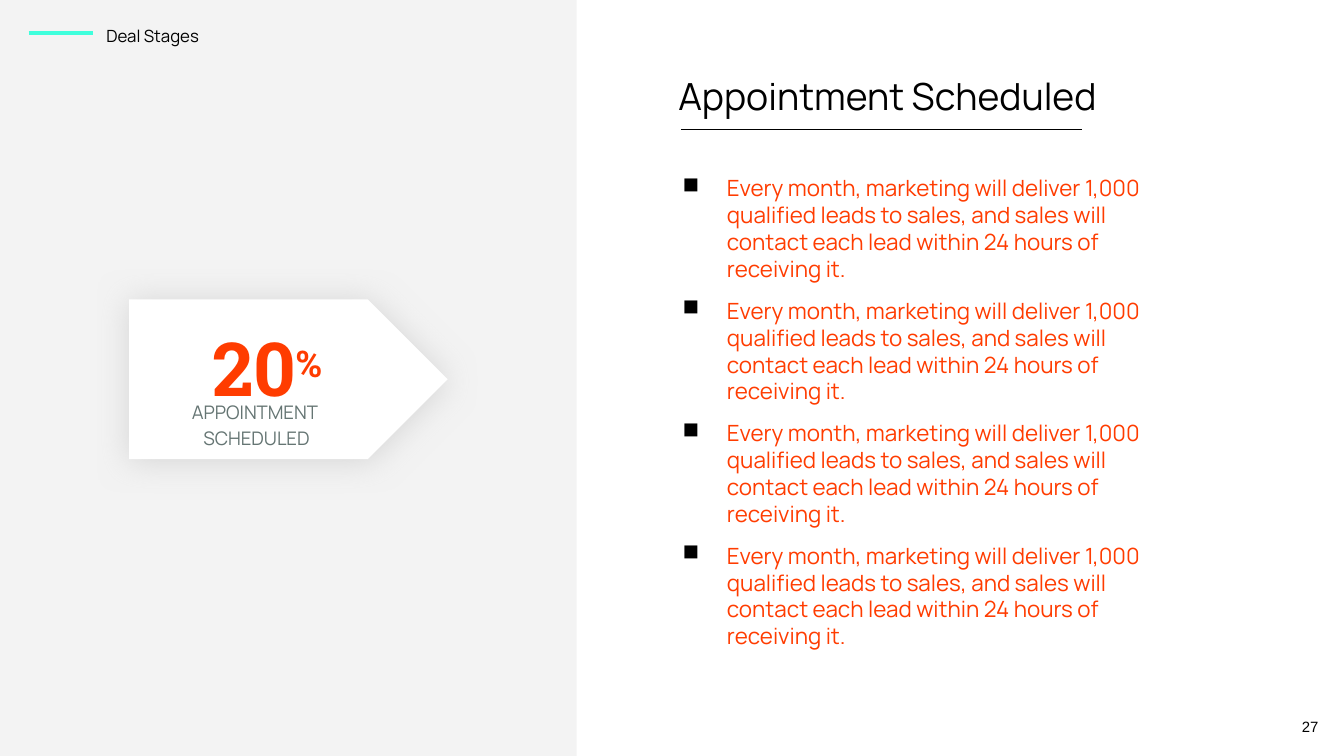
from lxml import etree
from pptx import Presentation
from pptx.dml.color import RGBColor
from pptx.enum.shapes import MSO_CONNECTOR, MSO_SHAPE
from pptx.enum.text import MSO_ANCHOR, PP_ALIGN
from pptx.oxml.ns import qn
from pptx.util import Cm, Pt

RECTANGLE = MSO_SHAPE.RECTANGLE
ARROW_TAG = MSO_SHAPE.PENTAGON
STRAIGHT = MSO_CONNECTOR.STRAIGHT
TOP, MIDDLE = MSO_ANCHOR.TOP, MSO_ANCHOR.MIDDLE
CENTER, RIGHT = PP_ALIGN.CENTER, PP_ALIGN.RIGHT

BLACK = RGBColor(0x00, 0x00, 0x00)
WHITE = RGBColor(0xFF, 0xFF, 0xFF)
PANEL_GRAY = RGBColor(0xF3, 0xF3, 0xF3)
LABEL_GRAY = RGBColor(0x65, 0x75, 0x73)
SHADOW_GRAY = RGBColor(0xB7, 0xB7, 0xB7)
ORANGE = RGBColor(0xFF, 0x3C, 0x00)
AQUA = RGBColor(0x3F, 0xFF, 0xDC)

SLIDE_WIDTH, SLIDE_HEIGHT = 25.4, 14.29
INSET = 0.25
COMMITMENT = ("Every month, marketing will deliver 1,000 qualified leads to sales, "
              "and sales will contact each lead within 24 hours of receiving it.")

HEADER = {"name": "Manrope", "size": Pt(9), "color": BLACK}
TITLE = {"name": "Manrope", "size": Pt(20), "color": BLACK}
BODY = {"name": "Manrope", "size": Pt(12), "color": ORANGE}
LABEL = {"name": "Manrope", "size": Pt(10), "color": LABEL_GRAY}
NUMBER = {"name": "Roboto Slab", "size": Pt(40), "bold": True, "color": ORANGE}
PERCENT = {**NUMBER, "size": Pt(34)}
PAGE = {"name": "Arial", "size": Pt(8), "color": BLACK}


def apply_format(target, values):
    for name, value in values.items():
        if name == "color":
            target.color.rgb = value
        else:
            setattr(target, name, value)


def add_run(paragraph, text, font_values):
    run = paragraph.add_run()
    run.text = text
    apply_format(run.font, font_values)
    return run


def add_text_frame(slide, box, anchor=TOP):
    frame = slide.shapes.add_textbox(*(Cm(length) for length in box)).text_frame
    margins = ("margin_left", "margin_top", "margin_right", "margin_bottom")
    apply_format(frame, {"word_wrap": True, "vertical_anchor": anchor,
                         **dict.fromkeys(margins, Cm(INSET))})
    return frame


def add_text(slide, box, text, font_values, anchor=TOP, **paragraph_values):
    paragraph = add_text_frame(slide, box, anchor).paragraphs[0]
    apply_format(paragraph, paragraph_values)
    for index, line in enumerate(text.split("\n")):
        if index:
            paragraph.add_line_break()
        add_run(paragraph, line, font_values)


def add_rule(slide, left, top, width, color, weight):
    rule = slide.shapes.add_connector(STRAIGHT, Cm(left), Cm(top), Cm(left + width), Cm(top))
    apply_format(rule.line, {"color": color, "width": Pt(weight)})
    etree.SubElement(rule._element.spPr, qn("a:effectLst"))


def add_filled_shape(slide, kind, box, color):
    shape = slide.shapes.add_shape(kind, *(Cm(length) for length in box))
    shape.shadow.inherit = False
    shape.fill.solid()
    shape.fill.fore_color.rgb = color
    shape.line.fill.background()
    return shape


def add_soft_shadow(shape):
    effects = shape._element.spPr.find(qn("a:effectLst"))
    shadow = etree.SubElement(effects, qn("a:outerShdw"), blurRad=str(Pt(18)),
                              dist=str(Pt(0.8)), dir="5400000", algn="bl", rotWithShape="0")
    color = etree.SubElement(shadow, qn("a:srgbClr"), val=str(SHADOW_GRAY))
    etree.SubElement(color, qn("a:alpha"), val="50000")


def set_square_bullet(paragraph):
    properties = paragraph._p.get_or_add_pPr()
    properties.set("marL", str(Cm(1.27)))
    properties.set("indent", str(Cm(-0.84)))
    color = etree.SubElement(properties, qn("a:buClr"))
    etree.SubElement(color, qn("a:srgbClr"), val=str(BLACK))
    etree.SubElement(properties, qn("a:buChar"), char="■")


def add_header(slide, left, top, width, height):
    add_text(slide, (left + 1.22, top, width - 1.22, height), "Deal Stages", HEADER,
             line_spacing=1.15)
    add_rule(slide, left, top + 0.43, 1.22, AQUA, 2.25)


def add_stage_tag(slide, left, top, width, height):
    tag = add_filled_shape(slide, ARROW_TAG, (left, top, width, height), WHITE)
    tag.adjustments[0] = 0.5
    add_soft_shadow(tag)

    text_width = width * 0.8
    add_text(slide, (left, top + 1.6, text_width, 1.09), "APPOINTMENT \nSCHEDULED", LABEL,
             alignment=CENTER, line_spacing=1.15)

    paragraph = add_text_frame(slide, (left + 0.2, top - 0.08, text_width, 1.7)).paragraphs[0]
    apply_format(paragraph, {"alignment": CENTER, "line_spacing": 1.15})
    add_run(paragraph, "20", NUMBER)
    percent = add_run(paragraph, "%", PERCENT)
    percent._r.get_or_add_rPr().set("baseline", "30000")


def add_title(slide, left, top, width, height):
    add_text(slide, (left, top, width, height), "Appointment Scheduled", TITLE)
    add_rule(slide, left + 0.3, top + 1.31, 7.57, BLACK, 0.75)


def add_commitments(slide, left, top, width, height, count=4):
    frame = add_text_frame(slide, (left, top, width, height))
    for index in range(count):
        paragraph = frame.add_paragraph() if index else frame.paragraphs[0]
        set_square_bullet(paragraph)
        if index:
            paragraph.space_before = Pt(8)
        add_run(paragraph, COMMITMENT, BODY)
    paragraph.space_after = Pt(8)


def main():
    presentation = Presentation()
    presentation.slide_width = Cm(SLIDE_WIDTH)
    presentation.slide_height = Cm(SLIDE_HEIGHT)
    slide = presentation.slides.add_slide(presentation.slide_layouts[6])

    add_filled_shape(slide, RECTANGLE, (0, 0, 10.9, SLIDE_HEIGHT), PANEL_GRAY)
    add_text(slide, (23.65, 13.18, 1.52, 1.09), "27", PAGE, anchor=MIDDLE, alignment=RIGHT)
    add_header(slide, 0.54, 0.2, 11.46, 0.81)
    add_commitments(slide, 12.22, 3.05, 10.24, 9.96)
    add_stage_tag(slide, 2.44, 5.66, 6.02, 3.02)
    add_title(slide, 12.57, 1.14, 8.69, 1.09)
    presentation.save("out.pptx")


if __name__ == "__main__":
    main()
